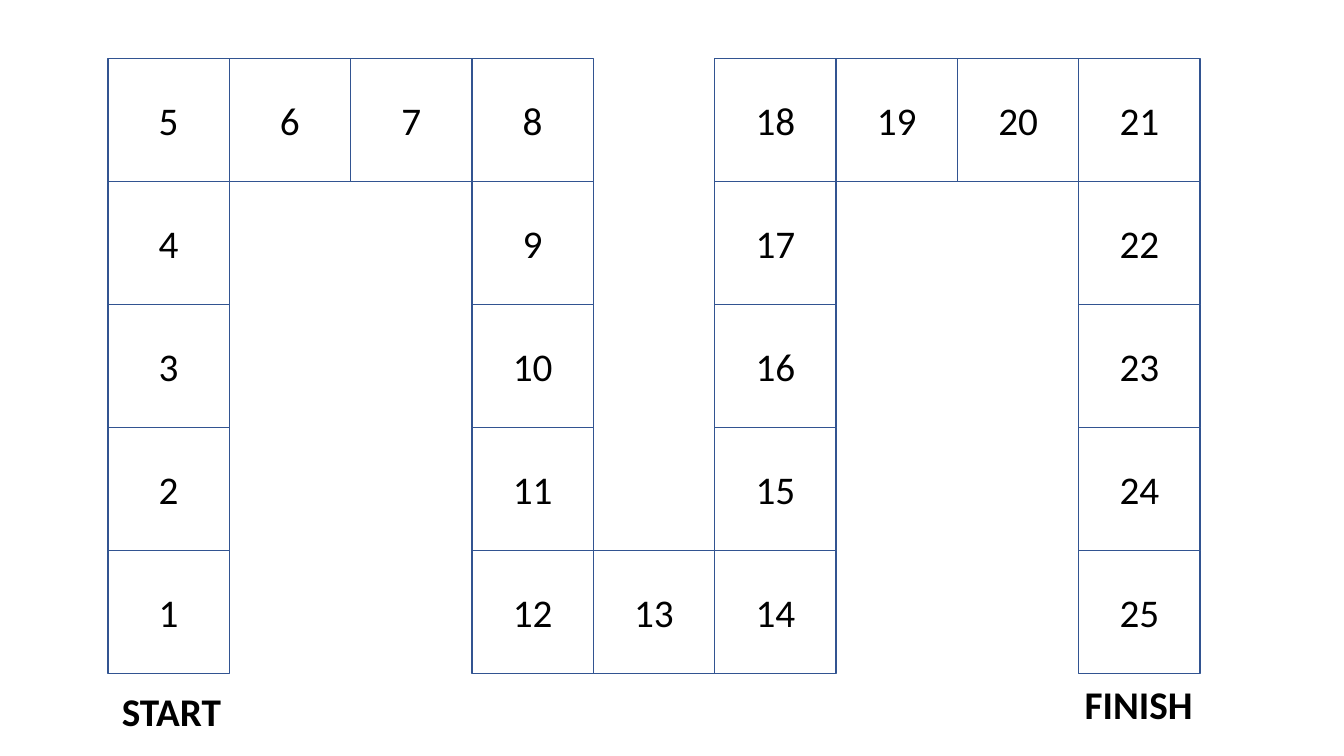
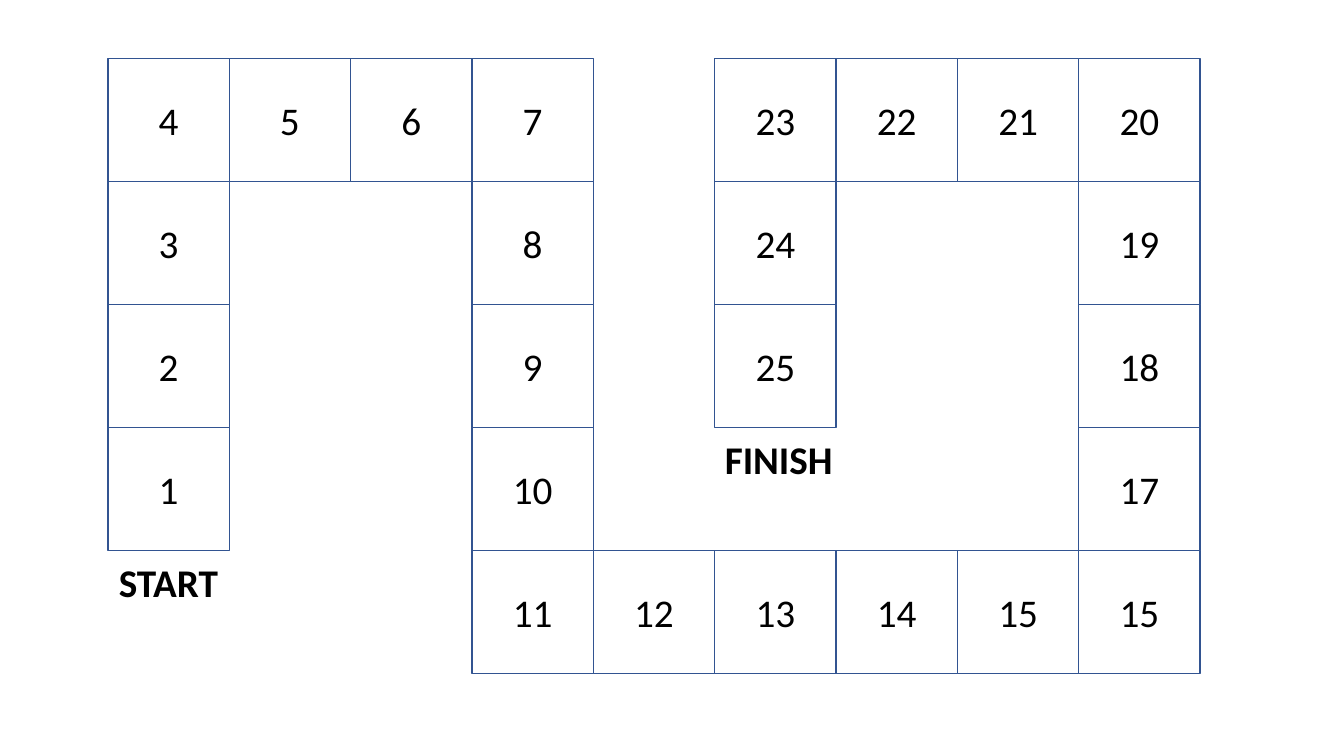
"""Build two winding number boards of 25 squares each."""
import pptx
import pptx.dml.color
import pptx.enum.shapes
import pptx.enum.text
import pptx.util

Inches = pptx.util.Inches
Pt = pptx.util.Pt

WHITE = pptx.dml.color.RGBColor(0xFF, 0xFF, 0xFF)
BLACK = pptx.dml.color.RGBColor(0x00, 0x00, 0x00)
BLUE = pptx.dml.color.RGBColor(0x32, 0x54, 0x91)
FONT = "Calibri"
TEXT_SIZE = Pt(28)

BOARD_LEFT, BOARD_TOP = 1.07, 0.58
LAST_COLUMN_LEFT, LAST_COLUMN = 10.7, 8
COLUMN_STEP = (LAST_COLUMN_LEFT - BOARD_LEFT) / LAST_COLUMN
ROW_STEP = 1.22

FIRST_CORNERS = [(0, 4), (0, 0), (3, 0), (3, 4), (5, 4), (5, 0), (8, 0), (8, 4)]
SECOND_CORNERS = [(0, 3), (0, 0), (3, 0), (3, 4), (8, 4), (8, 0), (5, 0), (5, 2)]
FIRST_NUMBERS = list(range(1, 26))
SECOND_NUMBERS = [*range(1, 16), 15, *range(17, 26)]


def walk(corners):
    """Return every (column, row) square on the way from corner to corner."""
    squares = [corners[0]]
    for end_column, end_row in corners[1:]:
        while squares[-1] != (end_column, end_row):
            column, row = squares[-1]
            column += (end_column > column) - (end_column < column)
            row += (end_row > row) - (end_row < row)
            squares.append((column, row))
    return squares


def add_span(para, text, bold=False):
    """Add one run in the board's lettering."""
    span = para.add_run()
    span.text = text
    span.font.name = FONT
    span.font.size = TEXT_SIZE
    span.font.bold = bold
    span.font.color.rgb = BLACK


def add_square(page, column, row, number):
    """Draw one numbered square of the grid."""
    square = page.shapes.add_shape(
        pptx.enum.shapes.MSO_SHAPE.RECTANGLE,
        Inches(BOARD_LEFT + column * COLUMN_STEP),
        Inches(BOARD_TOP + row * ROW_STEP),
        Inches(COLUMN_STEP),
        Inches(ROW_STEP),
    )
    square.shadow.inherit = False
    square.fill.solid()
    square.fill.fore_color.rgb = WHITE
    square.line.color.rgb = BLUE
    square.line.width = Pt(1)
    square.text_frame.vertical_anchor = pptx.enum.text.MSO_ANCHOR.MIDDLE
    para = square.text_frame.paragraphs[0]
    para.alignment = pptx.enum.text.PP_ALIGN.CENTER
    add_span(para, str(number))


def add_label(page, text, left, top, width, wrap):
    """Write a bold label beside one end of the board."""
    box = page.shapes.add_textbox(
        Inches(left), Inches(top), Inches(width), Inches(0.57)
    )
    box.text_frame.word_wrap = wrap
    box.text_frame.auto_size = pptx.enum.text.MSO_AUTO_SIZE.SHAPE_TO_FIT_TEXT
    add_span(box.text_frame.paragraphs[0], text, bold=True)


def add_board(deck, corners, numbers, start, finish):
    """Add a page with a numbered track and its two end labels."""
    page = deck.slides.add_slide(deck.slide_layouts[6])
    for (column, row), number in zip(walk(corners), numbers):
        add_square(page, column, row, number)
    add_label(page, "START", *start, width=1.2, wrap=False)
    add_label(page, "FINISH", *finish, width=1.45, wrap=True)


def main():
    """Build and save the deck."""
    deck = pptx.Presentation()
    deck.slide_width = Inches(13.33)
    deck.slide_height = Inches(7.5)
    add_board(deck, FIRST_CORNERS, FIRST_NUMBERS, (1.11, 6.77), (10.66, 6.7))
    add_board(deck, SECOND_CORNERS, SECOND_NUMBERS, (1.08, 5.49), (7.09, 4.27))
    deck.save("out.pptx")


if __name__ == "__main__":
    main()
